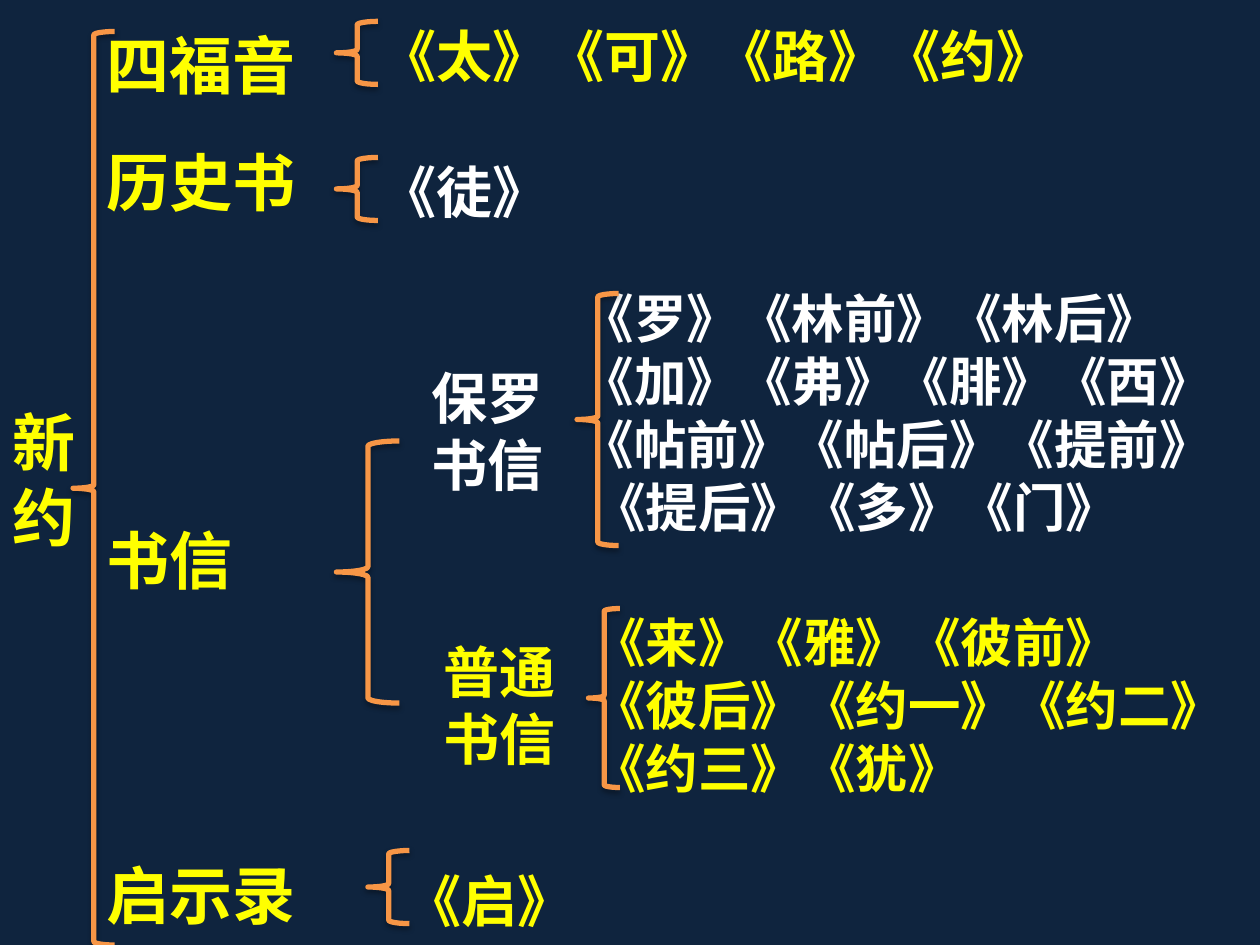
"""Builds a slide that charts the books of the New Testament."""
from lxml.etree import SubElement as Sub
from pptx import Presentation
from pptx.dml.color import RGBColor
from pptx.enum.shapes import MSO_SHAPE as Shape
from pptx.enum.text import MSO_ANCHOR as Anchor
from pptx.oxml.ns import qn
from pptx.util import Inches, Pt

FONT = "Noto Sans CJK SC"
YELLOW, WHITE, ORANGE, NAVY = "FFFF00", "FFFFFF", "F79646", "0F243E"


def color(code):
    return RGBColor.from_string(code)


def write(slide, lines, left, mid, width, size, code):
    high = len(lines) * size * 1.2 / 72 + 0.1
    box = slide.shapes.add_textbox(
        Inches(left), Inches(mid - high / 2), Inches(width), Inches(high))
    frame = box.text_frame
    frame.word_wrap = True
    frame.vertical_anchor = Anchor.MIDDLE
    frame.text = "\n".join(lines)
    for para in frame.paragraphs:
        para.line_spacing = Pt(size * 1.2)
        font = para.font
        font.name, font.size, font.bold = FONT, Pt(size), True
        font.color.rgb = color(code)
        props = para._p.pPr.find(qn("a:defRPr"))
        Sub(props, qn("a:ea"), typeface=FONT)
    return frame.paragraphs


deck = Presentation()
deck.slide_width, deck.slide_height = Inches(10), Inches(7.5)
slide = deck.slides.add_slide(deck.slide_layouts[6])
slide.background.fill.solid()
slide.background.fill.fore_color.rgb = color(NAVY)

write(slide, ["新约"], 0, 3.8, 0.83, 36, YELLOW)

for name, mid in [("四福音", 0.51), ("历史书", 1.44), ("书信", 4.44), ("启示录", 7.1)]:
    write(slide, [name], 0.75, mid, 2.33, 36, YELLOW)

for books, left, mid, code in [
    ("《太》《可》《路》《约》", 2.92, 0.44, YELLOW),
    ("《徒》", 2.92, 1.52, WHITE),
    ("《启》", 3.12, 7.14, YELLOW),
]:
    write(slide, [books], left, mid, 7, 32, code)

write(slide, ["保罗书信"], 3.33, 3.42, 1.25, 32, WHITE)
write(slide, ["普通", "书信"], 3.42, 5.59, 1.25, 32, YELLOW)

paul = ["《罗》《林前》《林后》", "《加》《弗》《腓》《西》",
        "《帖前》《帖后》《提前》", "《提后》《多》《门》"]
rows = write(slide, paul, 4.52, 3.27, 5.4, 30, WHITE)
rows[-1]._p.pPr.set("marL", str(Inches(0.09)))

general = ["《来》《雅》《彼前》", "《彼后》《约一》《约二》", "《约三》《犹》"]
write(slide, general, 4.61, 5.59, 5.3, 30, YELLOW)

for left, top, width, high in [
    (0.58, 0.25, 0.33, 7.25),
    (2.67, 0.17, 0.33, 0.5),
    (2.67, 1.25, 0.33, 0.5),
    (2.67, 3.5, 0.5, 2.08),
    (2.92, 6.75, 0.33, 0.58),
    (4.58, 2.33, 0.33, 2),
    (4.67, 4.83, 0.25, 1.42),
]:
    brace = slide.shapes.add_shape(
        Shape.LEFT_BRACE, Inches(left), Inches(top), Inches(width), Inches(high))
    brace.fill.background()
    brace.line.color.rgb = color(ORANGE)
    brace.line.width = Pt(3)
    brace.shadow.inherit = False
    effects = brace._element.spPr.find(qn("a:effectLst"))
    shade = Sub(effects, qn("a:outerShdw"), blurRad=str(Pt(3.1)),
                dist=str(Pt(1.8)), dir="5400000", rotWithShape="0")
    black = Sub(shade, qn("a:srgbClr"), val="000000")
    Sub(black, qn("a:alpha"), val="35000")

deck.save("out.pptx")
